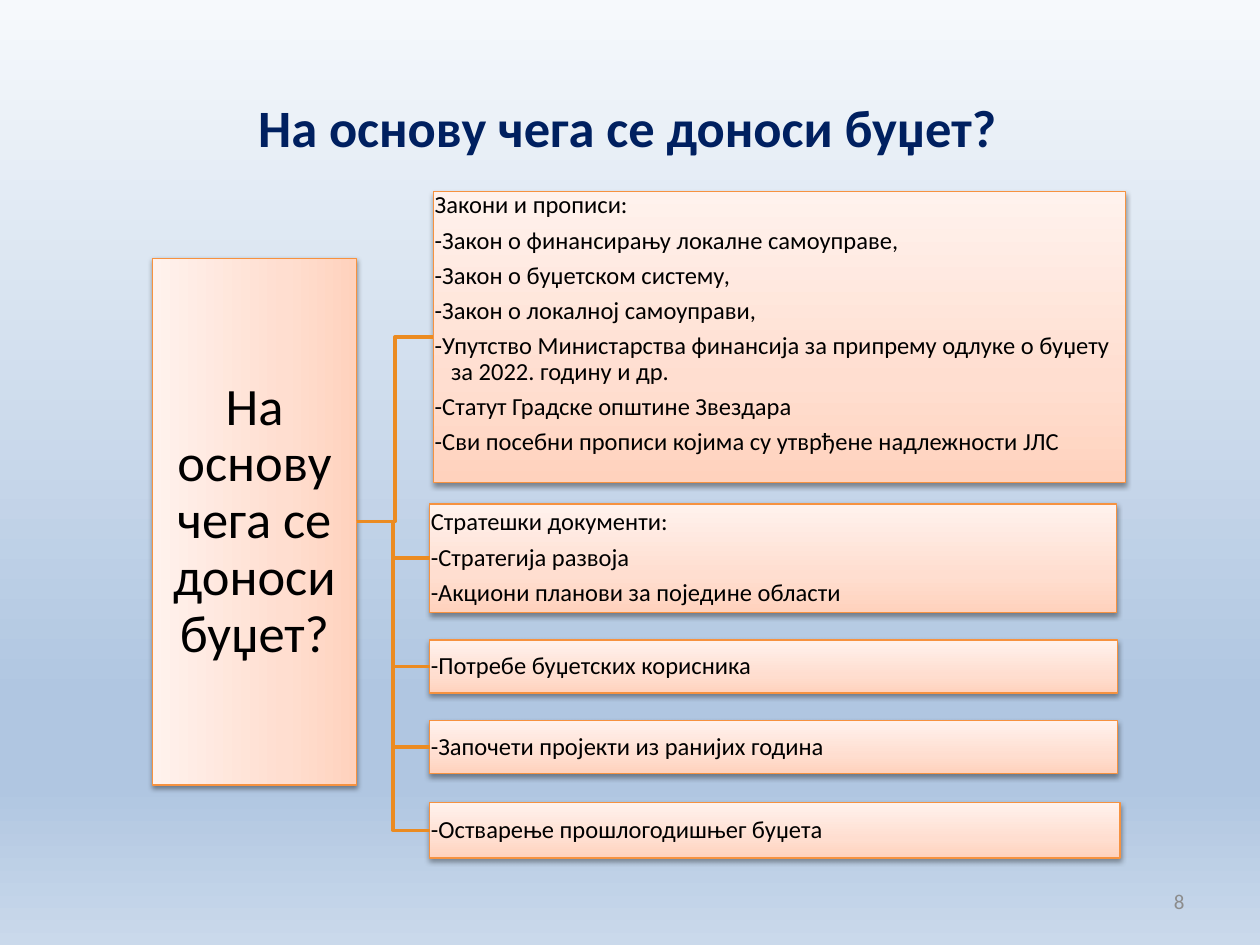
from lxml import etree
from pptx import Presentation
from pptx import util as u
from pptx.dml.color import RGBColor
from pptx.enum import shapes, text
from pptx.oxml.ns import qn

FONT = "Calibri"
COLORS = {
    "title": "002060",
    "ink": "000000",
    "number": "8C8C8C",
    "connector": "EB8B21",
    "outline": "F69240",
    "shadow": "000000",
}
PAGE_STOPS = [(0, "F6F9FC"), (74, "B0C6E1"), (83, "B0C6E1"), (100, "CAD9EB")]
BOX_STOPS = [(0, "FFD2BD"), (35, "FFDED0"), (100, "FFF2ED")]
QUESTION = "На основу чега се доноси буџет?"
SOURCES = [
    ((3.44, 1.52, 5.49, 2.31), [
        "Закони и прописи:",
        "-Закон о финансирању локалне самоуправе,",
        "-Закон о буџетском систему,",
        "-Закон о локалној самоуправи,",
        "-Упутство Министарства финансија за припрему одлуке о буџету за 2022. годину и др.",
        "-Статут Градске општине Звездара",
        "-Сви посебни прописи којима су утврђене надлежности ЈЛС",
    ]),
    ((3.41, 4, 5.45, 0.86), [
        "Стратешки документи:",
        "-Стратегија развоја",
        "-Акциони планови за поједине области",
    ]),
    ((3.41, 5.08, 5.46, 0.42), ["-Потребе буџетских корисника"]),
    ((3.41, 5.72, 5.46, 0.42), ["-Започети пројекти из ранијих година"]),
    ((3.41, 6.37, 5.48, 0.44), ["-Остварење прошлогодишњег буџета"]),
]


def inches(box):
    """Convert left, top, width and height to lengths."""
    return [u.Inches(value) for value in box]


def set_gradient(fill, element, stops, angle):
    """Give a fill a linear gradient with any number of stops."""
    fill.gradient()
    fill.gradient_angle = angle
    stop_list = next(element.iter(qn("a:gsLst")))
    for stop in list(stop_list):
        stop_list.remove(stop)
    for position, color in stops:
        stop = etree.SubElement(stop_list, qn("a:gs"), pos=str(position * 1000))
        etree.SubElement(stop, qn("a:srgbClr"), val=color)


def add_shadow(shape):
    """Put a soft shadow below a shape."""
    shape.shadow.inherit = False
    effects = shape._element.spPr.find(qn("a:effectLst"))
    shadow = etree.SubElement(
        effects, qn("a:outerShdw"), blurRad=str(u.Pt(3.1)), dist=str(u.Pt(1.6)),
        dir="5400000", rotWithShape="0")
    color = etree.SubElement(shadow, qn("a:srgbClr"), val=COLORS["shadow"])
    etree.SubElement(color, qn("a:alpha"), val="38000")


def style_paragraph(para, size, color, align, bold=False):
    """Set the font and alignment of a paragraph."""
    para.alignment = align
    para.font.name = FONT
    para.font.size = u.Pt(size)
    para.font.bold = bold
    para.font.color.rgb = RGBColor.from_string(COLORS[color])


def add_panel(page, box, lines, size, align, angle, inset, anchor, hanging=0):
    """Draw a shaded rectangle holding one paragraph per line."""
    panel = page.shapes.add_shape(shapes.MSO_SHAPE.RECTANGLE, *inches(box))
    set_gradient(panel.fill, panel._element, BOX_STOPS, angle)
    panel.line.color.rgb = RGBColor.from_string(COLORS["outline"])
    panel.line.width = u.Pt(0.75)
    add_shadow(panel)
    frame = panel.text_frame
    frame.word_wrap = True
    frame.vertical_anchor = anchor
    frame.margin_left = frame.margin_right = u.Inches(inset)
    frame.margin_top = frame.margin_bottom = u.Inches(inset)
    frame.text = "\n".join(lines)
    for para in frame.paragraphs:
        style_paragraph(para, size, "ink", align)
        para.line_spacing = 0.9
        para.space_after = u.Pt(size * 0.35)
        properties = para._p.get_or_add_pPr()
        properties.set("marL", str(u.Inches(hanging)))
        properties.set("indent", str(-u.Inches(hanging)))
    return panel


def link(page, start, end):
    """Join the right side of one panel to the left side of another."""
    connector = page.shapes.add_connector(shapes.MSO_CONNECTOR.ELBOW, 0, 0, 0, 0)
    connector.begin_connect(start, 3)
    connector.end_connect(end, 1)
    connector.line.color.rgb = RGBColor.from_string(COLORS["connector"])
    connector.line.width = u.Pt(2)
    etree.SubElement(connector._element.spPr, qn("a:effectLst"))


def add_title(page, box):
    """Place and format the slide title."""
    title = page.shapes.title
    title.left, title.top, title.width, title.height = inches(box)
    title.text_frame.text = QUESTION
    title.text_frame.vertical_anchor = text.MSO_ANCHOR.MIDDLE
    style_paragraph(title.text_frame.paragraphs[0], 30, "title", text.PP_ALIGN.CENTER, True)


def add_tree(page, root_box):
    """Draw the question and its linked sources."""
    middle = text.MSO_ANCHOR.MIDDLE
    root = add_panel(page, root_box, [QUESTION], 30, text.PP_ALIGN.CENTER, 180, 0.02, middle)
    for box, lines in SOURCES:
        anchor = text.MSO_ANCHOR.TOP if len(lines) > 3 else middle
        source = add_panel(page, box, lines, 14, text.PP_ALIGN.LEFT, 90, 0.01, anchor, 0.13)
        link(page, root, source)


def add_number(page, box):
    """Write the page number."""
    frame = page.shapes.add_textbox(*inches(box)).text_frame
    frame.word_wrap = True
    frame.vertical_anchor = text.MSO_ANCHOR.MIDDLE
    frame.text = "8"
    style_paragraph(frame.paragraphs[0], 12, "number", text.PP_ALIGN.RIGHT)


def main():
    """Build and save the deck."""
    deck = Presentation()
    deck.slide_width, deck.slide_height = u.Inches(10), u.Inches(7.5)
    page = deck.slides.add_slide(deck.slide_layouts[5])
    set_gradient(page.background.fill, page._element, PAGE_STOPS, 270)
    add_title(page, (0.48, 0.54, 9, 0.93))
    add_tree(page, (1.21, 2.05, 1.62, 4.18))
    add_number(page, (7.17, 6.95, 2.33, 0.4))
    deck.save("out.pptx")


if __name__ == "__main__":
    main()
